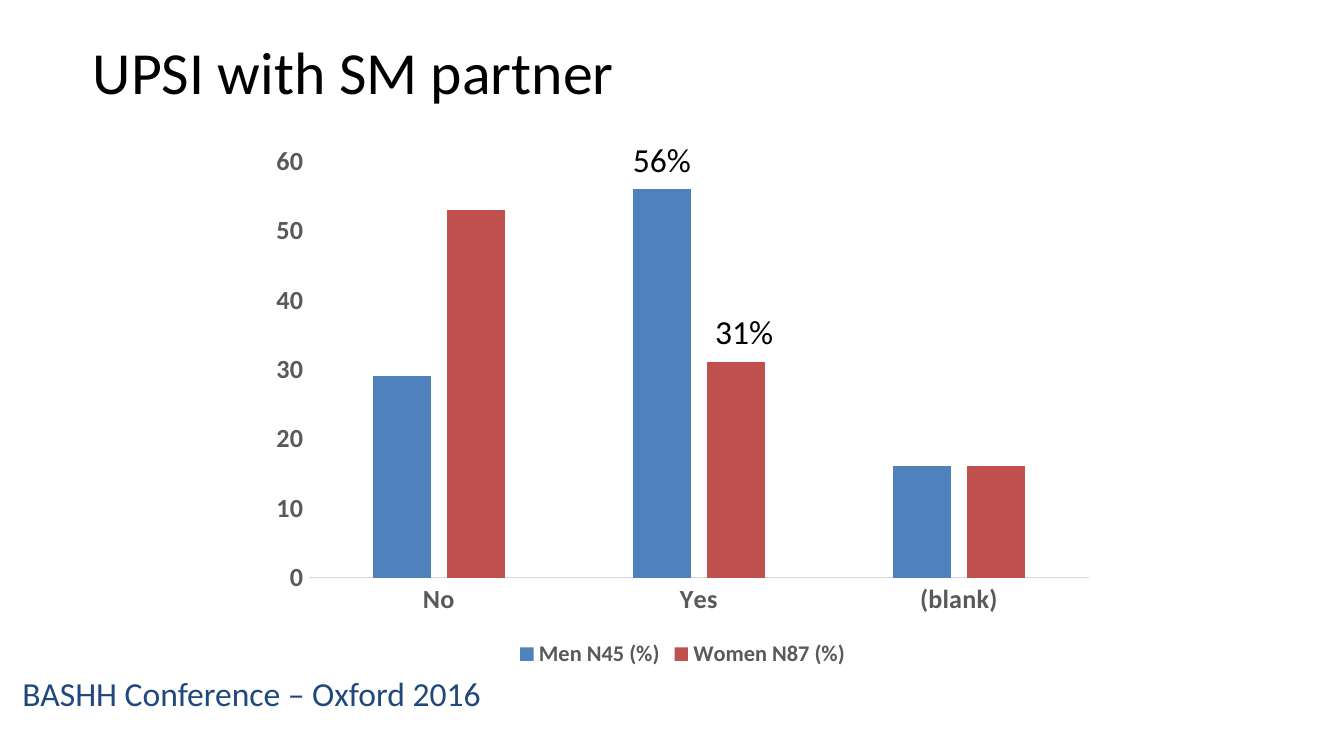
import pptx
import pptx.chart.data
import pptx.dml.color
import pptx.enum.chart
import pptx.enum.text
import pptx.util

Pt = pptx.util.Pt
COLOURS = {
    "text": "000000",
    "footer": "1F497D",
    "axis text": "595959",
    "axis line": "D9D9D9",
    "men": "4F81BD",
    "women": "C0504D",
}


def colour(name):
    return pptx.dml.color.RGBColor.from_string(COLOURS[name])


def set_attributes(target, values):
    for name, value in values.items():
        setattr(target, name, value)


class SlideBuilder:
    font_name = "Calibri"

    def __init__(self, presentation):
        title_only = presentation.slide_layouts[5]
        self.slide = presentation.slides.add_slide(title_only)

    def format_font(self, font, size, colour_name, bold=False):
        set_attributes(font, {"name": self.font_name, "size": Pt(size), "bold": bold})
        font.color.rgb = colour(colour_name)

    def fill_text(self, shape, text, size, colour_name, wrap=True):
        frame = shape.text_frame
        set_attributes(frame, {
            "text": text,
            "word_wrap": wrap,
            "auto_size": pptx.enum.text.MSO_AUTO_SIZE.NONE,
            "vertical_anchor": pptx.enum.text.MSO_ANCHOR.TOP,
        })
        paragraph = frame.paragraphs[0]
        paragraph.alignment = pptx.enum.text.PP_ALIGN.LEFT
        self.format_font(paragraph.runs[0].font, size, colour_name)

    def title(self, text, left, top, width, height):
        shape = self.slide.shapes.title
        set_attributes(shape, {"left": Pt(left), "top": Pt(top),
                               "width": Pt(width), "height": Pt(height)})
        self.fill_text(shape, text, 32, "text")

    def text(self, text, left, top, width, height, colour_name="text", wrap=True):
        shape = self.slide.shapes.add_textbox(Pt(left), Pt(top), Pt(width), Pt(height))
        self.fill_text(shape, text, 18, colour_name, wrap)

    def column_chart(self, categories, series_values, series_colours,
                     left, top, width, height):
        data = pptx.chart.data.CategoryChartData()
        data.categories = categories
        for name, values in series_values.items():
            data.add_series(name, values)
        chart = self.slide.shapes.add_chart(
            pptx.enum.chart.XL_CHART_TYPE.COLUMN_CLUSTERED,
            Pt(left), Pt(top), Pt(width), Pt(height), data).chart
        set_attributes(chart, {"has_title": False, "has_legend": True})
        self.format_font(chart.font, 10, "text")

        # Columns
        plot = chart.plots[0]
        set_attributes(plot, {"gap_width": 219, "overlap": -27,
                              "vary_by_categories": False})
        for series, colour_name in zip(plot.series, series_colours):
            series.format.fill.solid()
            series.format.fill.fore_color.rgb = colour(colour_name)

        # Axes
        for axis in (chart.category_axis, chart.value_axis):
            set_attributes(axis, {
                "has_major_gridlines": False,
                "major_tick_mark": pptx.enum.chart.XL_TICK_MARK.NONE,
                "minor_tick_mark": pptx.enum.chart.XL_TICK_MARK.NONE,
            })
            self.format_font(axis.tick_labels.font, 14, "axis text", bold=True)
        line = chart.category_axis.format.line
        line.width = Pt(0.75)
        line.color.rgb = colour("axis line")
        chart.value_axis.format.line.fill.background()
        set_attributes(chart.value_axis, {"minimum_scale": 0, "maximum_scale": 60,
                                          "major_unit": 10})

        # Legend
        set_attributes(chart.legend, {
            "position": pptx.enum.chart.XL_LEGEND_POSITION.BOTTOM,
            "include_in_layout": False,
        })
        self.format_font(chart.legend.font, 12, "axis text", bold=True)


def main():
    presentation = pptx.Presentation()
    set_attributes(presentation, {"slide_width": Pt(720), "slide_height": Pt(405)})
    builder = SlideBuilder(presentation)

    # Title and footer
    builder.title("UPSI with SM partner", 42.5, 15, 300, 46)
    builder.text("BASHH Conference – Oxford 2016", 5, 357, 344, 50, "footer")

    # Chart
    builder.column_chart(
        ["No", "Yes", "(blank)"],
        {"Men N45 (%)": (29, 56, 16), "Women N87 (%)": (53, 31, 16)},
        ["men", "women"], 139, 72, 453.5, 288.5)

    # Labels over the "Yes" columns
    for label, left, top in (("31%", 376, 163), ("56%", 332, 71)):
        builder.text(label, left, top, 46, 29, wrap=False)

    presentation.save("out.pptx")


if __name__ == "__main__":
    main()
